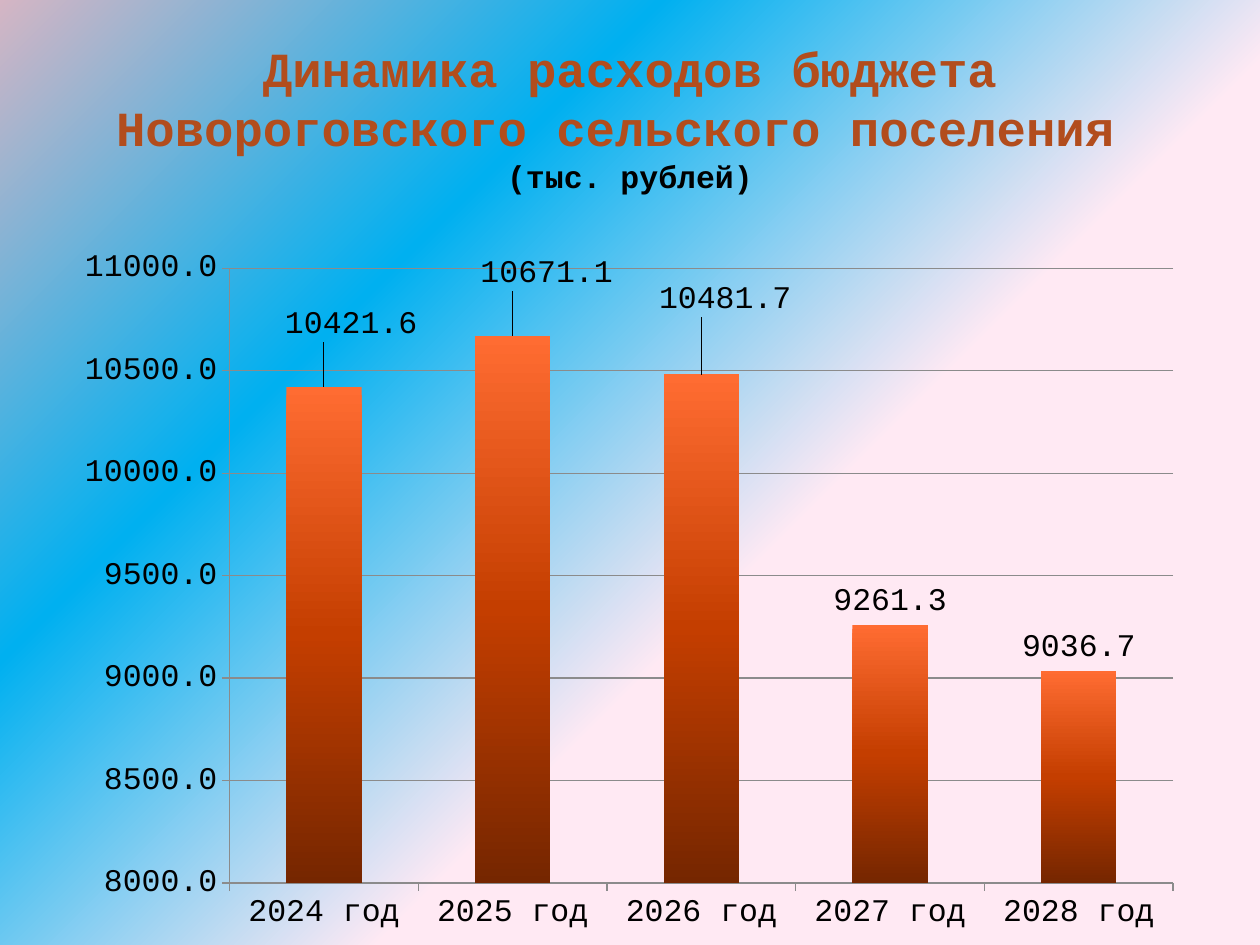
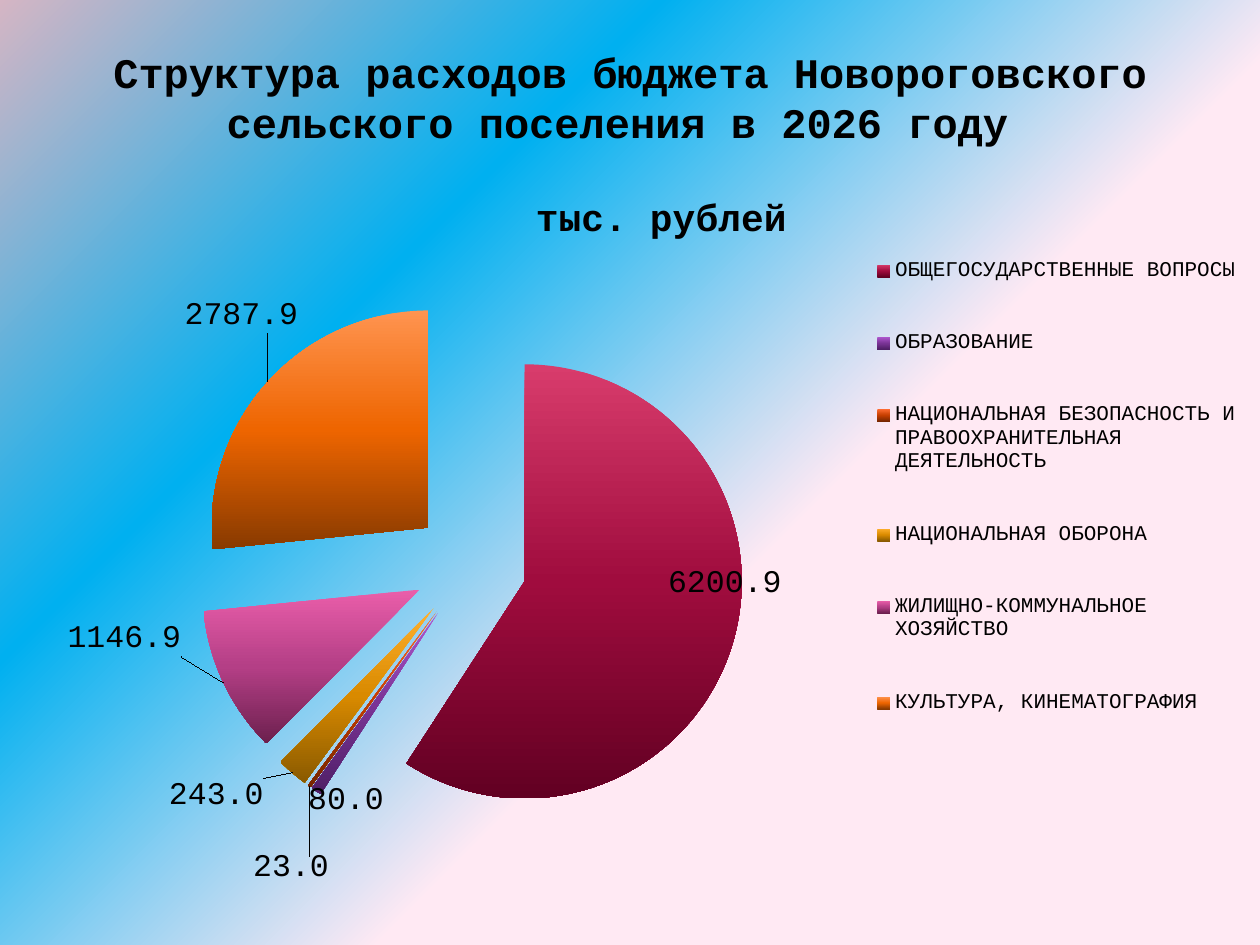
import pptx
import pptx.util
import pptx.chart.data
import pptx.dml.color
import pptx.enum.chart
import pptx.enum.text
import pptx.oxml
import pptx.oxml.ns

# ---- Content ----
TREND = {
    "title": [("Динамика расходов бюджета Новороговского сельского поселения ", "accent", "title"),
              ("(тыс. рублей)", "ink", "body")],
    "series": "Расходы",
    # year, value, label shift as shares of the chart
    "rows": [("2024 год", 10421.6, (0.024, -0.055)),
             ("2025 год", 10671.1, (0.03, -0.055)),
             ("2026 год", 10481.7, (0.021, -0.073)),
             ("2027 год", 9261.3, None),
             ("2028 год", 9036.7, None)],
}
STRUCTURE = {
    "title": [("Структура расходов бюджета Новороговского сельского поселения в 2026 году ",
               "ink", "subtitle")],
    "series": "тыс. рублей",
    # section, value, label shift, gradient from top to bottom
    "rows": [
        ("ОБЩЕГОСУДАРСТВЕННЫЕ ВОПРОСЫ", 6200.9, (-0.06, -0.11), ("D83C6C", "A00C3E", "620022")),
        ("ОБРАЗОВАНИЕ", 80, (0.06, -0.02), ("B058D0", "7A3496", "4F1F66")),
        ("НАЦИОНАЛЬНАЯ БЕЗОПАСНОСТЬ И ПРАВООХРАНИТЕЛЬНАЯ ДЕЯТЕЛЬНОСТЬ", 23, (0.02, 0.09),
         ("FF6C32", "C43E00", "752600")),
        ("НАЦИОНАЛЬНАЯ ОБОРОНА", 243, (-0.02, 0.0), ("FFB02E", "D98A00", "8A5A00")),
        ("ЖИЛИЩНО-КОММУНАЛЬНОЕ ХОЗЯЙСТВО", 1146.9, (-0.03, -0.09), ("EA5EAA", "B43F86", "6C204E")),
        ("КУЛЬТУРА, КИНЕМАТОГРАФИЯ", 2787.9, (0.03, -0.06), ("FF9450", "EE6500", "883A00")),
    ],
}

# ---- Theme ----
THEME = {
    "font": "Courier New",
    "color": {"ink": "000000", "accent": "B24D1D", "grid": "8B8B8B"},
    "size": {"title": 28, "subtitle": 24, "chart_title": 21.6, "body": 18, "legend": 12},
    "column": ("FF6C32", "C43E00", "752600"),
    "background": [(0, "FFE9F3"), (40, "FFE9F3"), (70, "00B0F0"), (100, "D5B5C4")],
}
WIDTH, HEIGHT = 10, 7.5
MARGIN = 0.05 * WIDTH
TITLE_H = 1.25

XL = pptx.enum.chart
NS = pptx.oxml.ns.nsdecls("a", "c", "p")


def xml(text):
    tag, rest = text.split(">", 1)
    return pptx.oxml.parse_xml(f"{tag} {NS}>{rest}")


def rgb(name):
    return pptx.dml.color.RGBColor.from_string(THEME["color"][name])


def inches(*lengths):
    return [pptx.util.Inches(v) for v in lengths]


def style(font, size, color="ink", bold=False):
    font.name, font.bold = THEME["font"], bold
    font.size = pptx.util.Pt(THEME["size"][size])
    font.color.rgb = rgb(color)


# ---- Gradients ----
def gradient(stops, direction):
    gs = "".join(f'<a:gs pos="{pos * 1000}"><a:srgbClr val="{c}"/></a:gs>' for pos, c in stops)
    return f"<a:gradFill><a:gsLst>{gs}</a:gsLst>{direction}</a:gradFill>"


def fill_vertical(fmt, colors):
    fmt.fill.background()
    fill = gradient(zip((0, 50, 100), colors), '<a:lin ang="5400000" scaled="0"/>')
    sp_pr = fmt.fill._xPr
    sp_pr.replace(sp_pr.find(pptx.oxml.ns.qn("a:noFill")), xml(fill))


def set_background(s):
    corner = '<a:path path="circle"><a:fillToRect l="100000" t="100000"/></a:path>'
    fill = gradient(THEME["background"], corner)
    s.element.cSld.insert(0, xml(f"<p:bg><p:bgPr>{fill}<a:effectLst/></p:bgPr></p:bg>"))


# ---- Chart layout ----
def layout(x, y, w=None, h=None, inner=False):
    parts = '<c:layoutTarget val="inner"/>' if inner else ""
    if w:
        parts += '<c:xMode val="edge"/><c:yMode val="edge"/>'
    for key, value in zip("xywh", (x, y, w, h)):
        if value is not None:
            parts += f'<c:{key} val="{value}"/>'
    return xml(f"<c:layout><c:manualLayout>{parts}</c:manualLayout></c:layout>")


def place_plot(chart, *box):
    area = chart.element.xpath(".//c:plotArea")[0]
    for old in area.xpath("c:layout"):
        area.remove(old)
    area.insert(0, layout(*box, inner=True))


def label_values(chart, rows):
    series = chart.plots[0].series[0]
    labels = series.data_labels
    labels.show_value = True
    labels.number_format, labels.number_format_is_linked = "0.0", False
    labels.position = XL.XL_LABEL_POSITION.OUTSIDE_END
    for i, row in enumerate(rows):
        if row[2]:
            series.points[i].data_label.position = XL.XL_LABEL_POSITION.OUTSIDE_END
            idx = chart.element.xpath(f".//c:dLbl/c:idx[@val='{i}']")[0]
            idx.addnext(layout(*row[2]))
    return series


# ---- Slide parts ----
def add_slide(prs, title, anchor_top):
    s = prs.slides.add_slide(prs.slide_layouts[6])
    set_background(s)
    sp = s.shapes.add_textbox(*inches(MARGIN, anchor_top, WIDTH - 2 * MARGIN, TITLE_H))
    tf = sp.text_frame
    tf.word_wrap = True
    tf.vertical_anchor = pptx.enum.text.MSO_ANCHOR.MIDDLE
    p = tf.paragraphs[0]
    p.alignment = pptx.enum.text.PP_ALIGN.CENTER
    for i, (text, color, size) in enumerate(title):
        if i:
            p.add_line_break()
        r = p.add_run()
        r.text = text
        style(r.font, size, color, bold=True)
    return s


def add_chart(s, kind, content, box):
    data = pptx.chart.data.CategoryChartData(number_format="0.0")
    data.categories = [row[0] for row in content["rows"]]
    data.add_series(content["series"], [row[1] for row in content["rows"]])
    chart = s.shapes.add_chart(kind, *inches(*box), data).chart
    style(chart.font, "body")
    chart.has_title = chart.has_legend = False
    return chart


def build_trend(prs):
    s = add_slide(prs, TREND["title"], 0.3)
    chart = add_chart(s, XL.XL_CHART_TYPE.COLUMN_CLUSTERED, TREND,
                      (MARGIN, 1.87, WIDTH - 2 * MARGIN, HEIGHT - 1.87))
    place_plot(chart, 0.147, 0.046, 0.832, 0.867)
    chart.plots[0].gap_width = 150
    chart.plots[0].vary_by_categories = False
    fill_vertical(label_values(chart, TREND["rows"]).format, THEME["column"])

    values = chart.value_axis
    values.minimum_scale, values.maximum_scale, values.major_unit = 8000, 11000, 500
    values.tick_labels.number_format = "0.0"
    values.tick_labels.number_format_is_linked = False
    values.has_major_gridlines = True
    for line in (values.format.line, values.major_gridlines.format.line,
                 chart.category_axis.format.line):
        line.color.rgb = rgb("grid")
        line.width = pptx.util.Pt(0.75)


def build_structure(prs):
    s = add_slide(prs, STRUCTURE["title"], 0.14)
    chart = add_chart(s, XL.XL_CHART_TYPE.PIE, STRUCTURE,
                      (MARGIN, 1.33, WIDTH - MARGIN, 5.7))
    chart.has_title = True
    r = chart.chart_title.text_frame.paragraphs[0].add_run()
    r.text = STRUCTURE["series"]
    style(r.font, "chart_title", bold=True)
    place_plot(chart, 0.112, 0.173, 0.457, 0.762)

    chart.has_legend = True
    chart.legend.position = XL.XL_LEGEND_POSITION.RIGHT
    chart.legend.include_in_layout = False
    style(chart.legend.font, "legend")
    chart.legend._element.legendPos.addnext(layout(0.67, 0.06, 0.32, 0.77))

    # Exploded slices
    chart.plots[0].vary_by_categories = True
    series = label_values(chart, STRUCTURE["rows"])
    for i, row in enumerate(STRUCTURE["rows"]):
        fill_vertical(series.points[i].format, row[3])
    first_point = chart.element.xpath(".//c:ser/c:dPt")[0]
    first_point.addprevious(xml('<c:explosion val="26"/>'.replace("/>", "></c:explosion>")))
    leader = chart.element.xpath(".//c:ser/c:dLbls")[0]
    for old in leader.xpath("c:showLeaderLines"):
        leader.remove(old)
    leader.append(xml('<c:showLeaderLines val="1"></c:showLeaderLines>'))


def main():
    prs = pptx.Presentation()
    prs.slide_width, prs.slide_height = inches(WIDTH, HEIGHT)
    build_trend(prs)
    build_structure(prs)
    prs.save("out.pptx")


if __name__ == "__main__":
    main()
